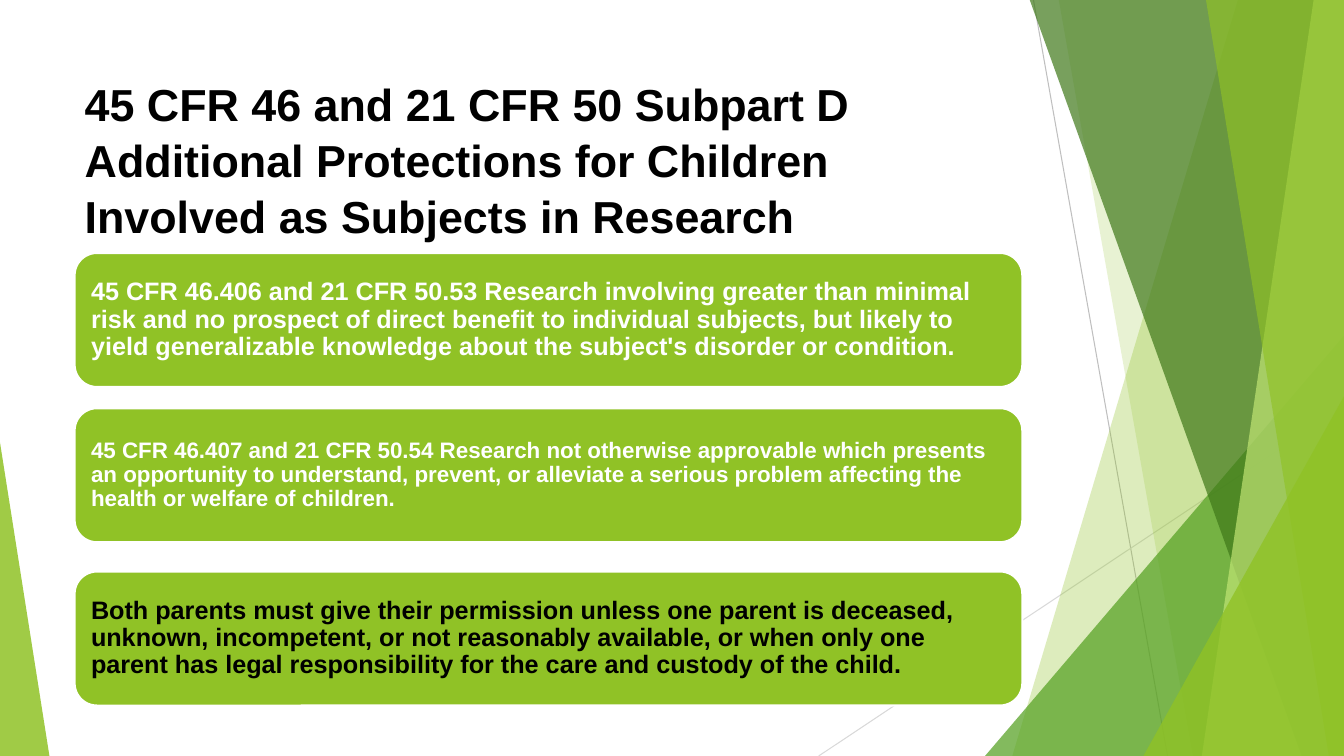
from lxml.etree import SubElement
from pptx import Presentation
from pptx.dml.color import RGBColor
from pptx.enum.shapes import MSO_CONNECTOR, MSO_SHAPE
from pptx.enum.text import MSO_ANCHOR, MSO_AUTO_SIZE, PP_ALIGN
from pptx.oxml.ns import qn
from pptx.util import Pt

PX = 9144
WIDE, HIGH = 1333, 750
LIME = RGBColor(0x90, 0xC2, 0x26)
GREEN = RGBColor(0x54, 0xA0, 0x21)
DARK = RGBColor(0x3F, 0x78, 0x19)
PALE = RGBColor(0xC0, 0xE4, 0x74)
GRAY = RGBColor(0xBF, 0xBF, 0xBF)
SILVER = RGBColor(0xD9, 0xD9, 0xD9)
WHITE = RGBColor(0xFF, 0xFF, 0xFF)
BLACK = RGBColor(0, 0, 0)


def tint(shape, color, alpha):
    shape.shadow.inherit = False
    shape.line.fill.background()
    shape.fill.solid()
    shape.fill.fore_color.rgb = color
    node = shape.fill._xPr.find(qn("a:solidFill"))[0]
    SubElement(node, qn("a:alpha")).set("val", str(alpha * 1000))


def write(frame, text, size, color, space):
    frame.word_wrap = True
    frame.auto_size = MSO_AUTO_SIZE.NONE
    frame.text = text
    para = frame.paragraphs[0]
    para.alignment = PP_ALIGN.LEFT
    para.line_spacing = space
    for run in para.runs:
        run.font.name = "Arial"
        run.font.size = Pt(size)
        run.font.bold = True
        run.font.color.rgb = color


deck = Presentation()
deck.slide_width = WIDE * PX
deck.slide_height = HIGH * PX
slide = deck.slides.add_slide(deck.slide_layouts[5])
shapes = slide.shapes

for x1, y1, x2, y2, color in [
    (1025, 0, 1158, HIGH, GRAY),
    (WIDE, 403, 812, HIGH, SILVER),
]:
    line = shapes.add_connector(
        MSO_CONNECTOR.STRAIGHT, x1 * PX, y1 * PX, x2 * PX, y2 * PX)
    line.line.color.rgb = color
    line.line.width = Pt(0.75)
    SubElement(line._element.spPr, qn("a:effectLst"))

for kind, top, base, color, alpha in [
    ("band", 1228, 1004, LIME, 30),
    ("band", 1050, 1183, LIME, 20),
    ("peak", 333, 977, GREEN, 72),
    ("band", 1021, 1291, DARK, 70),
    ("band", 1303, 1192, PALE, 70),
    ("band", 1196, 1318, LIME, 65),
    ("peak", 393, 1134, LIME, 80),
]:
    if kind == "band":
        pen = shapes.build_freeform(top, -1, scale=PX)
        pen.add_line_segments([(WIDE, -1), (WIDE, HIGH), (base, HIGH)])
        facet = pen.convert_to_shape()
    else:
        facet = shapes.add_shape(
            MSO_SHAPE.ISOSCELES_TRIANGLE, base * PX, top * PX,
            (WIDE - base) * PX, (HIGH - top) * PX)
        facet.adjustments[0] = 1
    tint(facet, color, alpha)

edge = shapes.add_shape(
    MSO_SHAPE.ISOSCELES_TRIANGLE, 0, 439 * PX, 49 * PX, 311 * PX)
edge.adjustments[0] = 0
tint(edge, LIME, 85)

title = shapes.title
title.left, title.top = 74 * PX, 69 * PX
title.width, title.height = 913 * PX, 161 * PX
title.text_frame.vertical_anchor = MSO_ANCHOR.TOP
write(title.text_frame,
      "45 CFR 46 and 21 CFR 50 Subpart D\v"
      "Additional Protections for Children Involved as Subjects in Research",
      32, BLACK, 1.04)

for top, size, color, text in [
    (251, 18, WHITE,
     "45 CFR 46.406 and 21 CFR 50.53 Research involving greater than minimal "
     "risk and no prospect of direct benefit to individual subjects, but "
     "likely to yield generalizable knowledge about the subject's disorder "
     "or condition."),
    (405, 16, WHITE,
     "45 CFR 46.407 and 21 CFR 50.54 Research not otherwise approvable which "
     "presents an opportunity to understand, prevent, or alleviate a serious "
     "problem affecting the health or welfare of children."),
    (567, 18, BLACK,
     "Both parents must give their permission unless one parent is deceased, "
     "unknown, incompetent, or not reasonably available, or when only one "
     "parent has legal responsibility for the care and custody of the child."),
]:
    card = shapes.add_shape(
        MSO_SHAPE.ROUNDED_RECTANGLE, 74 * PX, top * PX, 940 * PX, 133 * PX)
    card.shadow.inherit = False
    card.fill.solid()
    card.fill.fore_color.rgb = LIME
    card.line.color.rgb = WHITE
    card.line.width = Pt(1.5)
    frame = card.text_frame
    frame.margin_left = frame.margin_right = 10 * PX
    frame.margin_top = frame.margin_bottom = 14 * PX
    frame.vertical_anchor = MSO_ANCHOR.MIDDLE
    write(frame, text, size, color, 0.9)

deck.save("out.pptx")
